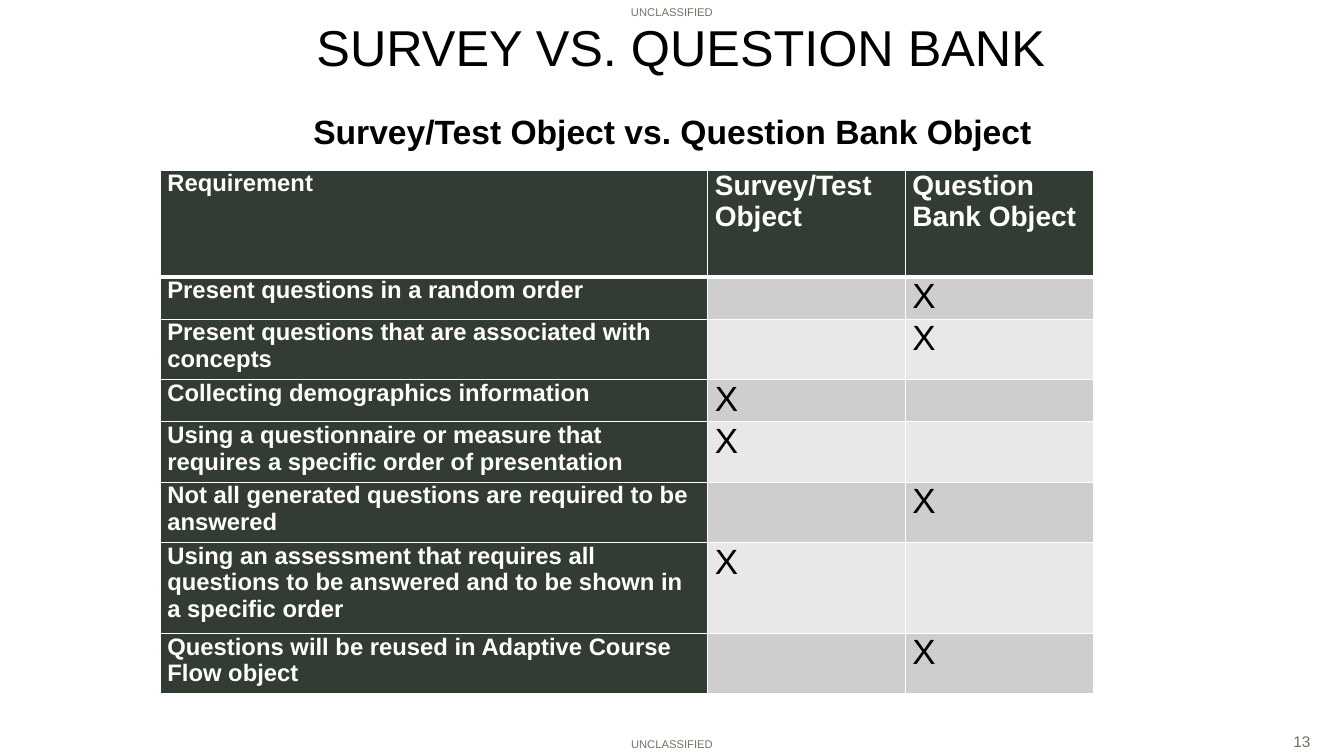
from lxml import etree
from pptx import Presentation
from pptx import util as u
from pptx.dml.color import RGBColor
from pptx.enum import text
from pptx.oxml.ns import qn

BLACK = RGBColor(0x00, 0x00, 0x00)
WHITE = RGBColor(0xFF, 0xFF, 0xFF)
GREY = RGBColor(0x71, 0x73, 0x65)
DARK_GREEN = RGBColor(0x33, 0x3C, 0x33)
BANDS = (RGBColor(0xCE, 0xCE, 0xCE), RGBColor(0xE8, 0xE8, 0xE8))

FONT = "Arial"
WIDTH, HEIGHT = u.Inches(13.33), u.Inches(7.5)

TOP_MARK = (0, 0, 100, 3.2)
BOTTOM_MARK = (15, 96.8, 70, 3.2)
PAGE_NUMBER = (95.5, 96.13, 4.5, 3.87)
TITLE = (22.81, 2.27, 60.84, 7.73)
SUBTITLE = (5.03, 14, 90.02, 76)
TABLE = (11.93, 22.53, 69.47, 66.13)

COLUMN_SHARES = (58.64, 21.17, 20.19)
HEADER_SHARE = 14.13
LINE_SHARE = 4

HEADINGS = ("Requirement", "Survey/Test Object", "Question Bank Object")
SURVEY, BANK = 1, 2
REQUIREMENTS = (
    ("Present questions in a random order", BANK, 1),
    ("Present questions that are associated with concepts", BANK, 2),
    ("Collecting demographics information", SURVEY, 1),
    ("Using a questionnaire or measure that requires a specific order of presentation", SURVEY, 2),
    ("Not all generated questions are required to be answered", BANK, 2),
    ("Using an assessment that requires all questions to be answered "
     "and to be shown in a specific order", SURVEY, 3),
    ("Questions will be reused in Adaptive Course Flow object", BANK, 2),
)


def place(box):
    left, top, width, height = box
    return (int(WIDTH * left / 100), int(HEIGHT * top / 100),
            int(WIDTH * width / 100), int(HEIGHT * height / 100))


def style(para, size, color, bold=False):
    para.font.name = FONT
    para.font.size = u.Pt(size)
    para.font.bold = bold
    para.font.color.rgb = color


def add_text(page, box, words, size, color, bold=False,
             align=text.PP_ALIGN.CENTER, anchor=text.MSO_ANCHOR.TOP):
    frame = page.shapes.add_textbox(*place(box)).text_frame
    frame.word_wrap = True
    frame.vertical_anchor = anchor
    para = frame.paragraphs[0]
    para.text = words
    para.alignment = align
    style(para, size, color, bold)


def add_borders(cell, bottom_width):
    properties = cell._tc.get_or_add_tcPr()
    widths = {"a:lnL": 1, "a:lnR": 1, "a:lnT": 1, "a:lnB": bottom_width}
    for position, (tag, width) in enumerate(widths.items()):
        line = etree.Element(qn(tag), w=str(u.Pt(width)))
        fill = etree.SubElement(line, qn("a:solidFill"))
        etree.SubElement(fill, qn("a:srgbClr"), val=str(WHITE))
        properties.insert(position, line)


def fill_cell(cell, words, size, color, background, bold=True, bottom_width=1):
    cell.margin_left = cell.margin_right = u.Inches(0.07)
    cell.margin_top = cell.margin_bottom = 0
    cell.fill.solid()
    cell.fill.fore_color.rgb = background
    add_borders(cell, bottom_width)
    para = cell.text_frame.paragraphs[0]
    para.text = words
    para.space_after = u.Pt(12)
    style(para, size, color, bold)


def add_comparison(page, box):
    left, top, width, height = place(box)
    table = page.shapes.add_table(len(REQUIREMENTS) + 1, len(HEADINGS),
                                  left, top, width, height).table
    table.horz_banding = False
    for column, share in zip(table.columns, COLUMN_SHARES):
        column.width = int(width * share / 100)

    table.rows[0].height = int(HEIGHT * HEADER_SHARE / 100)
    for column, heading in enumerate(HEADINGS):
        fill_cell(table.cell(0, column), heading, 20 if column else 17,
                  WHITE, DARK_GREEN, bottom_width=3)

    for row, (requirement, choice, lines) in enumerate(REQUIREMENTS, 1):
        table.rows[row].height = int(HEIGHT * LINE_SHARE * lines / 100)
        fill_cell(table.cell(row, 0), requirement, 17, WHITE, DARK_GREEN)
        for column in (SURVEY, BANK):
            chosen = column == choice
            fill_cell(table.cell(row, column), "X" if chosen else "",
                      25 if chosen else 17, BLACK, BANDS[(row - 1) % 2], bold=False)


def add_page_marks(page):
    for box in (BOTTOM_MARK, TOP_MARK):
        add_text(page, box, "UNCLASSIFIED", 8, GREY, anchor=text.MSO_ANCHOR.BOTTOM)
    add_text(page, PAGE_NUMBER, "13", 11, GREY, align=text.PP_ALIGN.LEFT)


def add_headings(page):
    add_text(page, TITLE, "SURVEY VS. QUESTION BANK", 36, BLACK,
             align=text.PP_ALIGN.LEFT, anchor=text.MSO_ANCHOR.MIDDLE)
    add_text(page, SUBTITLE, "Survey/Test Object vs. Question Bank Object", 24, BLACK, bold=True)


def main():
    deck = Presentation()
    deck.slide_width, deck.slide_height = WIDTH, HEIGHT
    page = deck.slides.add_slide(deck.slide_layouts[6])
    add_page_marks(page)
    add_headings(page)
    add_comparison(page, TABLE)
    deck.save("out.pptx")


if __name__ == "__main__":
    main()
